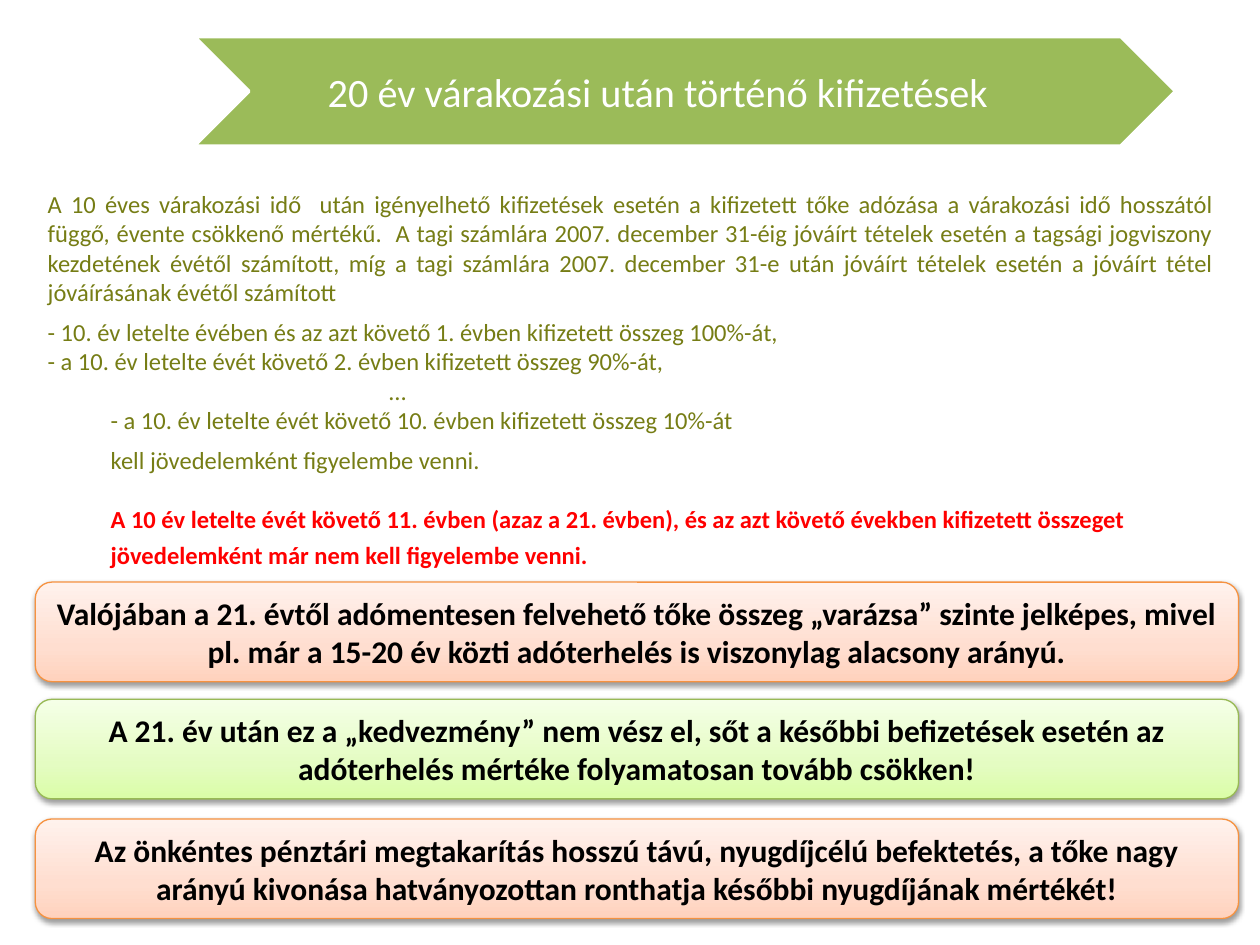
from copy import deepcopy
from dataclasses import dataclass

from lxml import etree
from pptx import Presentation
from pptx.dml.color import RGBColor
from pptx.enum.shapes import MSO_SHAPE
from pptx.enum.text import MSO_ANCHOR, PP_ALIGN
from pptx.oxml.ns import qn
from pptx.util import Inches, Pt

CHEVRON = MSO_SHAPE.CHEVRON
ROUNDED = MSO_SHAPE.ROUNDED_RECTANGLE
MIDDLE = MSO_ANCHOR.MIDDLE
CENTER, JUSTIFY, LEFT = PP_ALIGN.CENTER, PP_ALIGN.JUSTIFY, PP_ALIGN.LEFT

FONT = "Calibri"
COLORS = {
    "white": "FFFFFF",
    "black": "000000",
    "banner": "9BBB59",
    "olive": "767D15",
    "red": "FF0000",
}


@dataclass(frozen=True)
class Theme:
    line: str
    stops: tuple[tuple[float, str], ...]


@dataclass(frozen=True)
class Callout:
    top: float
    theme: Theme
    text: str


@dataclass(frozen=True)
class Line:
    text: str
    indent: float = 0
    before: float = 0
    after: float = 0
    align: PP_ALIGN = LEFT
    color: str = "olive"
    bold: bool = False


ORANGE = Theme("F69240", ((0, "FFD2BD"), (0.35, "FFDED0"), (1, "FFF2ED")))
GREEN = Theme("98B955", ((0, "DAFDA7"), (0.35, "E4FCC2"), (1, "F5FFE7")))

TITLE = "20 év várakozási után történő kifizetések"
BODY = [
    Line(
        "A 10 éves várakozási idő  után igényelhető kifizetések esetén a kifizetett tőke "
        "adózása a várakozási idő hosszától függő, évente csökkenő mértékű.  A tagi számlára "
        "2007. december 31-éig jóváírt tételek esetén a tagsági jogviszony kezdetének évétől "
        "számított, míg a tagi számlára 2007. december 31-e után jóváírt tételek esetén a "
        "jóváírt tétel jóváírásának évétől számított",
        after=6,
        align=JUSTIFY,
    ),
    Line("- 10. év letelte évében és az azt követő 1. évben kifizetett összeg 100%-át,"),
    Line("- a 10. év letelte évét követő 2. évben kifizetett összeg 90%-át,"),
    Line("…", indent=2.71),
    Line("- a 10. év letelte évét követő 10. évben kifizetett összeg 10%-át", indent=0.5),
    Line("kell jövedelemként figyelembe venni.", indent=0.5, before=6),
    Line(
        "A 10 év letelte évét követő 11. évben (azaz a 21. évben), és az azt követő években "
        "kifizetett összeget",
        indent=0.5, before=17, color="red", bold=True,
    ),
    Line(
        "jövedelemként már nem kell figyelembe venni.",
        indent=0.5, before=3.5, color="red", bold=True,
    ),
]
CALLOUTS = [
    Callout(
        4.62, ORANGE,
        "Valójában a 21. évtől adómentesen felvehető tőke összeg „varázsa” szinte jelképes, "
        "mivel pl. már a 15-20 év közti adóterhelés is viszonylag alacsony arányú.",
    ),
    Callout(
        5.55, GREEN,
        "A 21. év után ez a „kedvezmény” nem vész el, sőt a későbbi befizetések esetén az "
        "adóterhelés mértéke folyamatosan tovább csökken!",
    ),
    Callout(
        6.5, ORANGE,
        "Az önkéntes pénztári megtakarítás hosszú távú, nyugdíjcélú befektetés, a tőke nagy "
        "arányú kivonása hatványozottan ronthatja későbbi nyugdíjának mértékét!",
    ),
]


def write(para, text: str, *, size: float, color: str, bold: bool = False,
          align: PP_ALIGN = LEFT, indent: float = 0) -> None:
    para.alignment = align
    if indent:
        properties = para._p.get_or_add_pPr()
        properties.set("marL", str(Inches(indent)))
        properties.set("indent", "0")
    span = para.add_run()
    span.text = text
    span.font.name = FONT
    span.font.size = Pt(size)
    span.font.bold = bold
    span.font.color.rgb = RGBColor.from_string(COLORS[color])


def add_box(page, left: float, top: float, width: float, height: float):
    box = page.shapes.add_textbox(Inches(left), Inches(top), Inches(width), Inches(height))
    box.text_frame.word_wrap = True
    return box.text_frame


def add_shadow(shape) -> None:
    shape.shadow.inherit = False
    effects = shape._element.spPr.find(qn("a:effectLst"))
    shadow = etree.SubElement(
        effects, qn("a:outerShdw"), blurRad=str(Pt(3.1)), dist=str(Pt(1.6)),
        dir="5400000", rotWithShape="0",
    )
    color = etree.SubElement(shadow, qn("a:srgbClr"), val=COLORS["black"])
    etree.SubElement(color, qn("a:alpha"), val="38000")


def fill_gradient(shape, theme: Theme) -> None:
    shape.fill.gradient()
    shape.fill.gradient_angle = 90
    stop_list = shape._element.spPr.find(".//" + qn("a:gsLst"))
    stop_list.insert(1, deepcopy(stop_list[0]))
    for stop, (position, color) in zip(shape.fill.gradient_stops, theme.stops):
        stop.position = position
        stop.color.rgb = RGBColor.from_string(color)


def add_callout(page, callout: Callout) -> None:
    shape = page.shapes.add_shape(
        ROUNDED, Inches(0.28), Inches(callout.top), Inches(9.55), Inches(0.79))
    fill_gradient(shape, callout.theme)
    shape.line.color.rgb = RGBColor.from_string(callout.theme.line)
    shape.line.width = Pt(0.75)
    add_shadow(shape)
    frame = shape.text_frame
    frame.word_wrap = True
    frame.vertical_anchor = MIDDLE
    write(frame.paragraphs[0], callout.text, size=18, color="black", bold=True, align=CENTER)


def add_banner(page) -> None:
    banner = page.shapes.add_shape(
        CHEVRON, Inches(1.54), Inches(0.29), Inches(7.79), Inches(0.87))
    banner.fill.solid()
    banner.fill.fore_color.rgb = RGBColor.from_string(COLORS["banner"])
    banner.line.color.rgb = RGBColor.from_string(COLORS["white"])
    banner.line.width = Pt(2)
    banner.shadow.inherit = False
    frame = add_box(page, 1.44, 0.29, 7.12, 0.87)
    frame.vertical_anchor = MIDDLE
    frame.margin_right = frame.margin_top = frame.margin_bottom = Inches(0.04)
    write(frame.paragraphs[0], TITLE, size=23, color="white", align=CENTER, indent=0.39)


def add_body(page) -> None:
    frame = add_box(page, 0.28, 1.45, 9.45, 4.76)
    for index, line in enumerate(BODY):
        para = frame.add_paragraph() if index else frame.paragraphs[0]
        write(para, line.text, size=14, color=line.color, bold=line.bold,
              align=line.align, indent=line.indent)
        if line.before:
            para.space_before = Pt(line.before)
        if line.after:
            para.space_after = Pt(line.after)


def main() -> None:
    deck = Presentation()
    deck.slide_width, deck.slide_height = Inches(10), Inches(7.5)
    page = deck.slides.add_slide(deck.slide_layouts[6])
    add_banner(page)
    add_body(page)
    for callout in CALLOUTS:
        add_callout(page, callout)
    deck.save("out.pptx")


if __name__ == "__main__":
    main()
